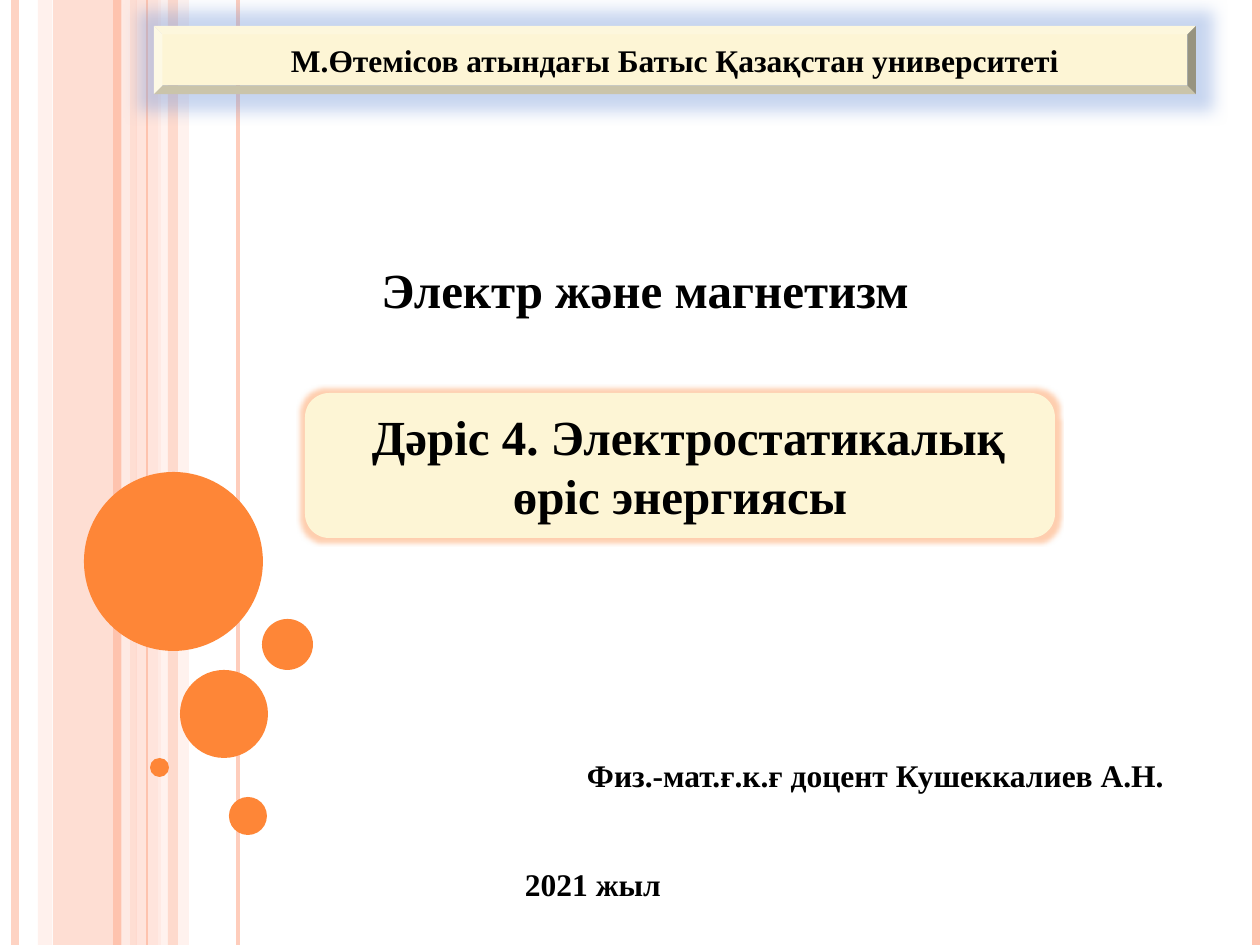
from lxml import etree
from pptx import Presentation
from pptx.dml.color import RGBColor
from pptx.enum.shapes import MSO_CONNECTOR, MSO_SHAPE
from pptx.enum.text import MSO_ANCHOR, MSO_AUTO_SIZE, PP_ALIGN
from pptx.oxml.ns import qn
from pptx.util import Emu, Pt

STRAIGHT = MSO_CONNECTOR.STRAIGHT
RECTANGLE, OVAL = MSO_SHAPE.RECTANGLE, MSO_SHAPE.OVAL
BEVEL, ROUNDED = MSO_SHAPE.BEVEL, MSO_SHAPE.FLOWCHART_ALTERNATE_PROCESS
CENTER, TOP, MIDDLE = PP_ALIGN.CENTER, MSO_ANCHOR.TOP, MSO_ANCHOR.MIDDLE
FIT_SHAPE = MSO_AUTO_SIZE.SHAPE_TO_FIT_TEXT

PX = 914400 / 126
WIDTH, HEIGHT = 1260, 945
COLORS = {
    "peach": "FEC3AE",
    "light": "FFD9CE",
    "pale": "FFEDE8",
    "orange": "FE8637",
    "cream": "FDF5D5",
    "blue_glow": "7598D9",
    "text": "000000",
}


def px(*lengths):
    return [Emu(round(length * PX)) for length in lengths]


def write(shape, text, size, anchor=TOP, wrap=True):
    """Put one centred bold paragraph into the shape and return it."""
    frame = shape.text_frame
    frame.text = text
    frame_format = {"word_wrap": wrap, "auto_size": FIT_SHAPE, "vertical_anchor": anchor}
    for name, value in frame_format.items():
        setattr(frame, name, value)
    paragraph = frame.paragraphs[0]
    paragraph.alignment = CENTER
    font = paragraph.runs[0].font
    font_format = {"name": "Times New Roman", "size": Pt(size), "bold": True}
    for name, value in font_format.items():
        setattr(font, name, value)
    font.color.rgb = RGBColor.from_string(COLORS["text"])
    return paragraph


prs = Presentation()
prs.slide_width, prs.slide_height = px(WIDTH, HEIGHT)
slide = prs.slides.add_slide(prs.slide_layouts[5])
shapes = slide.shapes

# Background: (left, width, colour, opacity in percent)
bands = [
    (53, 84, "peach", 54),
    (38, 14, "light", 36),
    (136, 25, "light", 70),
    (158, 31, "pale", 71),
    (168, 10, "peach", 51),
]
# (x, line width in points, colour, opacity in percent)
rules = [
    (15, 4.5, "peach", 73),
    (126, 4.5, "pale", 83),
    (117, 4.5, "peach", 100),
    (238, 2.25, "peach", 82),
    (147, 0.75, "peach", 100),
    (1256, 4.5, "peach", 100),
]
translucent = []
for left, width, color, opacity in bands[:-1]:
    band = shapes.add_shape(RECTANGLE, *px(left, 0, width, HEIGHT))
    translucent.append((band, band.fill, color, opacity))
for x, weight, color, opacity in rules:
    rule = shapes.add_connector(STRAIGHT, *px(x, 0, x, HEIGHT))
    rule.line.width = Pt(weight)
    etree.SubElement(rule._element.spPr, qn("a:effectLst"))
    translucent.append((rule, rule.line.fill, color, opacity))
left, width, color, opacity = bands[-1]
front_band = shapes.add_shape(RECTANGLE, *px(left, 0, width, HEIGHT))
translucent.append((front_band, front_band.fill, color, opacity))

for part, fill, color, opacity in translucent:
    fill.solid()
    fill.fore_color.rgb = RGBColor.from_string(COLORS[color])
    color_node = next(part._element.spPr.iter(qn("a:srgbClr")))
    etree.SubElement(color_node, qn("a:alpha"), val=str(opacity * 1000))
    if fill is not part.line.fill and part.shape_type != rule.shape_type:
        part.line.fill.background()
        part.shadow.inherit = False

# Bubbles: (left, top, diameter)
bubbles = [(84, 472, 179), (180, 670, 88), (150, 758, 19), (229, 797, 38), (262, 619, 51)]
for left, top, diameter in bubbles:
    bubble = shapes.add_shape(OVAL, *px(left, top, diameter, diameter))
    bubble.fill.solid()
    bubble.fill.fore_color.rgb = RGBColor.from_string(COLORS["orange"])
    bubble.line.fill.background()
    bubble.shadow.inherit = False

# Glowing panels: (preset, box, text, size, glow colour, glow radius in points, first indent)
panels = [
    (BEVEL, (154, 26, 1042, 68), "М.Өтемісов атындағы Батыс Қазақстан университеті",
     18, "blue_glow", 18, 0),
    (ROUNDED, (305, 393, 750, 145), "Дәріс 4. Электростатикалық өріс энергиясы",
     28, "orange", 5, 17),
]
for preset, box, text, size, glow_color, radius, indent in panels:
    panel = shapes.add_shape(preset, *px(*box))
    panel.fill.solid()
    panel.fill.fore_color.rgb = RGBColor.from_string(COLORS["cream"])
    panel.line.fill.background()
    panel.shadow.inherit = False
    effects = panel._element.spPr.find(qn("a:effectLst"))
    glow = etree.SubElement(effects, qn("a:glow"), rad=str(Pt(radius)))
    glow_node = etree.SubElement(glow, qn("a:srgbClr"), val=COLORS[glow_color])
    etree.SubElement(glow_node, qn("a:alpha"), val="40000")
    paragraph = write(panel, text, size, MIDDLE)
    paragraph._p.get_or_add_pPr().set("indent", str(px(indent)[0]))

course = shapes.title
course.left, course.top, course.width, course.height = px(139, 253, 1012, 72)
write(course, "Электр және магнетизм", 28)

year = shapes.add_textbox(*px(512, 859, 162, 50))
write(year, "2021 жыл", 18, wrap=False)

lecturer = shapes.add_textbox(*px(494, 750, 763, 50))
write(lecturer, "Физ.-мат.ғ.к.ғ доцент Кушеккалиев А.Н.", 18)

prs.save("out.pptx")
